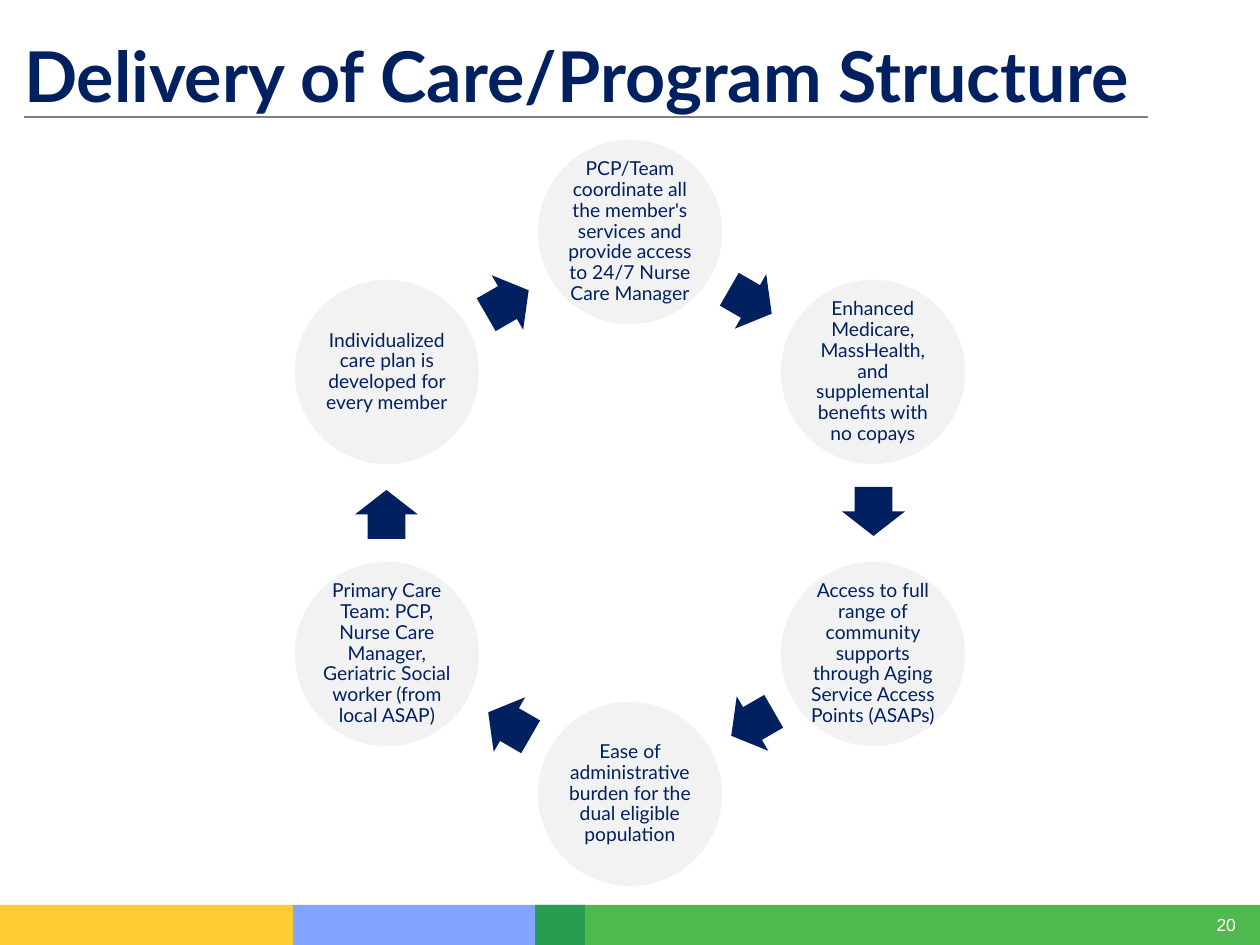
"""Build the care delivery cycle slide."""
import math
from typing import NamedTuple

import lxml.etree
import pptx
import pptx.dml.color
import pptx.enum.shapes
import pptx.enum.text
import pptx.oxml.ns
import pptx.util

PX = 914400 // 126
HUES = {
    "navy": "002060", "pale": "F2F2F2", "white": "FFFFFF", "rule": "808080",
    "blue": "5E8BFF", "gold": "FFC000", "green": "009900",
}
KIND = pptx.enum.shapes.MSO_SHAPE
ALIGN = pptx.enum.text.PP_ALIGN
ANCHOR = pptx.enum.text.MSO_ANCHOR
FIT = pptx.enum.text.MSO_AUTO_SIZE


class Box(NamedTuple):
    left: int
    top: int
    width: int
    height: int


class Band(NamedTuple):
    box: Box
    hue: str
    alpha: int


BANDS = [
    Band(Box(293, 905, 292, 40), "blue", 77),
    Band(Box(0, 905, 293, 40), "gold", 80),
    Band(Box(535, 905, 725, 40), "green", 69),
]
STEPS = [
    "PCP/Team coordinate all the member's services and provide access to 24/7 Nurse Care Manager",
    "Enhanced Medicare, MassHealth, and supplemental benefits with no copays",
    "Access to full range of community supports through Aging Service Access Points (ASAPs)",
    "Ease of administrative burden for the dual eligible population",
    "Primary Care Team: PCP, Nurse Care Manager, Geriatric Social worker (from local ASAP)",
    "Individualized care plan is developed for every member",
]
MID_X, MID_Y, RING = 630, 513, 281
DISC, LONG, WIDE = 188, 49, 63
TURN = 360 / len(STEPS)
LAG = 0.35


def color(name: str) -> pptx.dml.color.RGBColor:
    return pptx.dml.color.RGBColor.from_string(HUES[name])


def emu(box: Box) -> list[int]:
    return [size * PX for size in box]


def around(angle: float, reach: float, width: int, height: int) -> Box:
    turn = math.radians(angle)
    x = MID_X + reach * math.sin(turn)
    y = MID_Y - reach * math.cos(turn)
    return Box(round(x - width / 2), round(y - height / 2), width, height)


def add_shape(slide, kind, box: Box, hue: str):
    shape = slide.shapes.add_shape(kind, *emu(box))
    shape.shadow.inherit = False
    shape.fill.solid()
    shape.fill.fore_color.rgb = color(hue)
    shape.line.fill.background()
    return shape


def set_text(shape, text: str, face: str, size: int, hue: str, align, anchor, inset: int = 0):
    frame = shape.text_frame
    frame.auto_size = FIT.NONE
    frame.margin_left = frame.margin_right = inset * PX
    frame.margin_top = frame.margin_bottom = inset * PX
    frame.vertical_anchor = anchor
    frame.text = text
    para = frame.paragraphs[0]
    para.alignment = align
    para.font.name = face
    para.font.size = pptx.util.Pt(size)
    para.font.color.rgb = color(hue)
    return para


def add_band(slide, band: Band) -> None:
    shape = add_shape(slide, KIND.RECTANGLE, band.box, band.hue)
    tint = shape.fill._xPr.find(".//" + pptx.oxml.ns.qn("a:srgbClr"))
    alpha = lxml.etree.SubElement(tint, pptx.oxml.ns.qn("a:alpha"))
    alpha.set("val", str(band.alpha * 1000))


def add_step(slide, angle: float, text: str) -> None:
    disc = add_shape(slide, KIND.OVAL, around(angle, RING, DISC, DISC), "pale")
    disc.line.color.rgb = color("white")
    disc.line.width = pptx.util.Pt(2)
    para = set_text(disc, text, "Lato", 11, "navy", ALIGN.CENTER, ANCHOR.MIDDLE, 2)
    para.line_spacing = 0.9


def add_arrow(slide, angle: float) -> None:
    reach = RING * math.cos(math.radians(TURN / 2))
    box = around(angle - LAG, reach, LONG, WIDE)
    arrow = add_shape(slide, KIND.RIGHT_ARROW, box, "navy")
    arrow.adjustments[0] = 0.6
    arrow.adjustments[1] = 0.5
    arrow.rotation = angle


def add_title(slide) -> None:
    title = slide.shapes.title
    title.left, title.top, title.width, title.height = emu(Box(24, 33, 1110, 84))
    para = set_text(title, "Delivery of Care/Program Structure", "Lato", 40, "navy",
                    ALIGN.LEFT, ANCHOR.TOP)
    para.font.bold = True


def add_page(slide) -> None:
    page = slide.shapes.add_textbox(*emu(Box(1213, 914, 23, 21)))
    page.text_frame.word_wrap = False
    set_text(page, "20", "Arial", 10, "white", ALIGN.RIGHT, ANCHOR.MIDDLE)


def add_rule(slide) -> None:
    rule = slide.shapes.add_connector(
        pptx.enum.shapes.MSO_CONNECTOR.STRAIGHT, *emu(Box(24, 117, 1148, 117)))
    rule.line.color.rgb = color("rule")
    rule.line.width = pptx.util.Pt(0.75)
    lxml.etree.SubElement(rule._element.spPr, pptx.oxml.ns.qn("a:effectLst"))


def main() -> None:
    deck = pptx.Presentation()
    deck.slide_width = 1260 * PX
    deck.slide_height = 945 * PX
    slide = deck.slides.add_slide(deck.slide_layouts[5])
    for band in BANDS:
        add_band(slide, band)
    add_page(slide)
    add_title(slide)
    for index, text in enumerate(STEPS):
        add_step(slide, index * TURN, text)
        add_arrow(slide, (index + 0.5) * TURN)
    add_rule(slide)
    deck.save("out.pptx")


if __name__ == "__main__":
    main()
